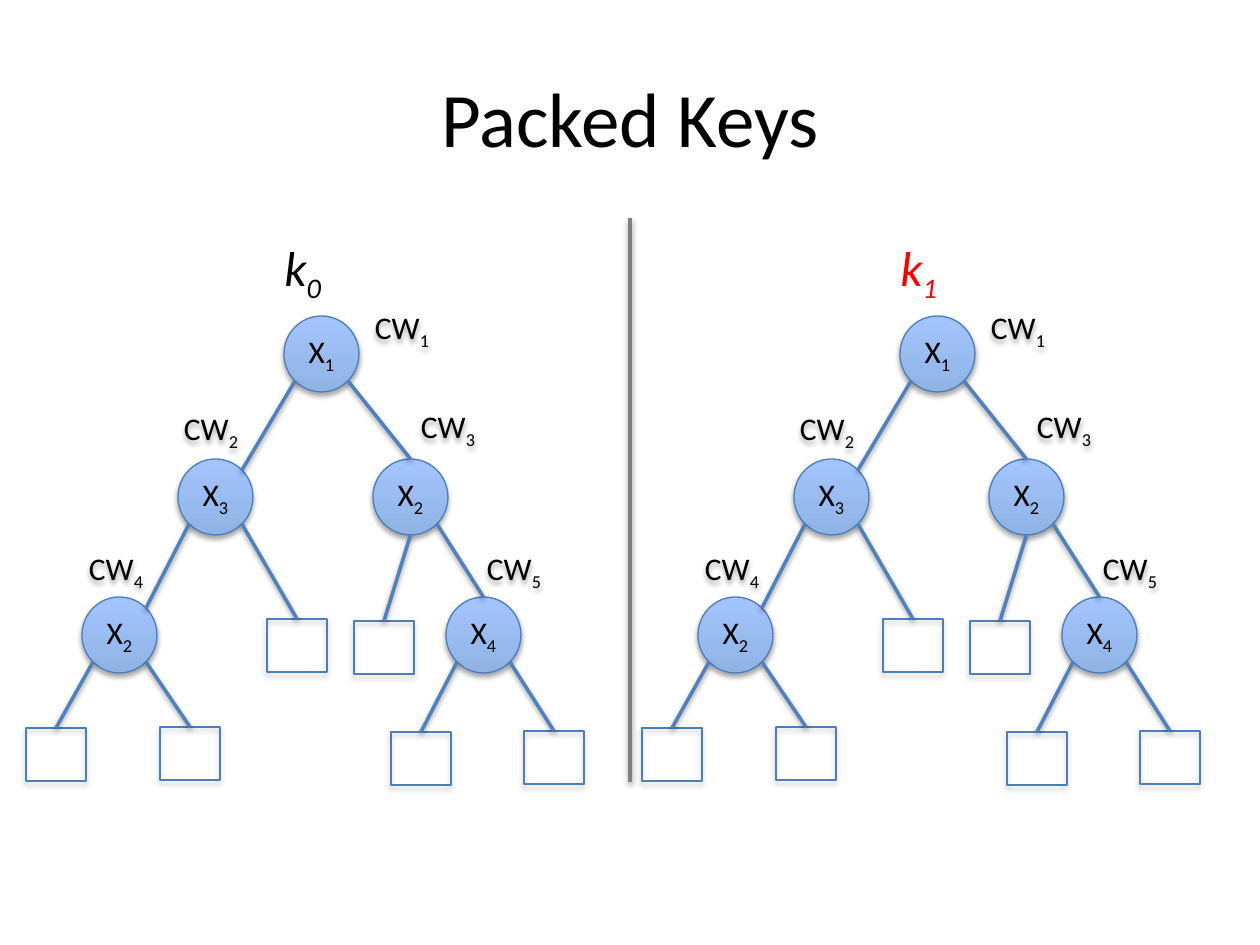
from lxml.etree import SubElement
from pptx import Presentation
from pptx.dml.color import RGBColor
from pptx.enum.shapes import MSO_CONNECTOR as Connector, MSO_SHAPE as Preset
from pptx.enum.text import MSO_ANCHOR as Anchor, PP_ALIGN as Align
from pptx.oxml.ns import qn
from pptx.util import Pt

EMU_PER_PX = 914400 / 126
FONT = "Calibri"
BLACK = RGBColor(0x00, 0x00, 0x00)
RED = RGBColor(0xFF, 0x00, 0x00)
GREY = RGBColor(0x80, 0x80, 0x80)
EDGE_BLUE = RGBColor(0x4F, 0x81, 0xBD)
OUTLINE_BLUE = RGBColor(0x4B, 0x7E, 0xBC)
NODE_BOTTOM = RGBColor(0x8E, 0xB4, 0xE3)
NODE_TOP = RGBColor(0xA4, 0xC4, 0xFF)

NODE_SIZE = (75, 76)
LEAF_SIZE = (60, 53)
LABEL_SIZE = (84, 50)
TREE_GAP = 616

# Tree parts: left and top of each, within the left-hand tree
NODES = {
    "root": ("1", 284, 316), "left": ("3", 178, 459), "right": ("2", 373, 459),
    "far left": ("2", 82, 597), "far right": ("4", 446, 597),
}
LEAVES = {
    "a": (26, 728), "b": (160, 727), "c": (267, 619),
    "d": (354, 621), "e": (391, 732), "f": (524, 731),
}
CORRECTION_WORDS = [("1", 360, 305), ("2", 169, 406), ("3", 406, 404),
                    ("4", 74, 546), ("5", 472, 546)]
# Points on a part, as shares of its width and height
TOP, BOTTOM = (0.5, 0), (0.5, 1)
TOP_RIGHT, BOTTOM_LEFT, BOTTOM_RIGHT = (0.85, 0.15), (0.15, 0.85), (0.85, 0.85)
EDGES = [
    ("root", BOTTOM_LEFT, "left", TOP_RIGHT), ("root", BOTTOM_RIGHT, "right", TOP),
    ("left", BOTTOM_LEFT, "far left", TOP_RIGHT), ("left", BOTTOM_RIGHT, "c", TOP),
    ("right", BOTTOM, "d", TOP), ("right", BOTTOM_RIGHT, "far right", TOP),
    ("far left", BOTTOM_LEFT, "a", TOP), ("far left", BOTTOM_RIGHT, "b", TOP),
    ("far right", BOTTOM_LEFT, "e", TOP), ("far right", BOTTOM_RIGHT, "f", TOP),
]


def px(*lengths):
    return [round(length * EMU_PER_PX) for length in lengths]


class KeySlide:
    def __init__(self, deck):
        self.slide = deck.slides.add_slide(deck.slide_layouts[5])
        self.shapes = self.slide.shapes

    def cast_shadow(self, shape, distance, alpha):
        effects = SubElement(shape.element.spPr, qn("a:effectLst"))
        shadow = SubElement(effects, qn("a:outerShdw"), blurRad=str(Pt(3.1)),
                            dist=str(Pt(distance)), dir="5400000", rotWithShape="0")
        black = SubElement(shadow, qn("a:srgbClr"), val="000000")
        SubElement(black, qn("a:alpha"), val=str(alpha * 1000))

    def styled_run(self, paragraph, text, size, color=BLACK, italic=False,
                   subscript=False):
        run = paragraph.add_run()
        run.text = text
        run.font.name, run.font.size = FONT, Pt(size)
        run.font.color.rgb, run.font.italic = color, italic
        if subscript:
            run.font._element.set("baseline", "-25000")

    def symbol(self, shape, letters, index, size=18, **style):
        paragraph = shape.text_frame.paragraphs[0]
        self.styled_run(paragraph, letters, size, **style)
        self.styled_run(paragraph, index, size, subscript=True, **style)

    def centred_symbol(self, shape, letters, index):
        frame = shape.text_frame
        frame.word_wrap = True
        frame.vertical_anchor = Anchor.MIDDLE
        frame.margin_left = frame.margin_right = 0
        frame.margin_top = frame.margin_bottom = 0
        frame.paragraphs[0].alignment = Align.CENTER
        self.symbol(shape, letters, index)

    def title(self, text, *place):
        heading = self.shapes.title
        heading.left, heading.top, heading.width, heading.height = px(*place)
        heading.text_frame.vertical_anchor = Anchor.MIDDLE
        paragraph = heading.text_frame.paragraphs[0]
        paragraph.alignment = Align.CENTER
        self.styled_run(paragraph, text, 44)

    def line(self, start, end, color):
        stroke = self.shapes.add_connector(Connector.STRAIGHT, *px(*start, *end))
        stroke.line.color.rgb, stroke.line.width = color, Pt(2)
        self.cast_shadow(stroke, 1.6, 38)

    def outline(self, shape):
        shape.line.color.rgb, shape.line.width = OUTLINE_BLUE, Pt(0.75)
        self.cast_shadow(shape, 1.8, 35)

    def node(self, index, x, y):
        circle = self.shapes.add_shape(Preset.OVAL, *px(x, y, *NODE_SIZE))
        circle.fill.gradient()
        circle.fill.gradient_angle = 90
        for stop, position, color in zip(circle.fill.gradient_stops, (0, 1),
                                         (NODE_BOTTOM, NODE_TOP)):
            stop.position, stop.color.rgb = position, color
        self.outline(circle)
        self.centred_symbol(circle, "X", index)

    def leaf(self, x, y):
        box = self.shapes.add_shape(Preset.RECTANGLE, *px(x, y, *LEAF_SIZE))
        box.fill.background()
        self.outline(box)

    def correction_word(self, index, x, y):
        label = self.shapes.add_textbox(*px(x, y, *LABEL_SIZE))
        self.cast_shadow(label, 1.8, 35)
        self.centred_symbol(label, "CW", index)

    def key_name(self, index, x, y, color):
        name = self.shapes.add_textbox(*px(x, y, 76, 72))
        name.text_frame.word_wrap = False
        self.symbol(name, "k", index, size=28, color=color, italic=True)

    def tree(self, offset, key_index, key_color):
        self.key_name(key_index, 272 + offset, 231, key_color)
        corners = {}
        for name, (index, x, y) in NODES.items():
            self.node(index, x + offset, y)
            corners[name] = (x + offset, y, *NODE_SIZE)
        for name, (x, y) in LEAVES.items():
            self.leaf(x + offset, y)
            corners[name] = (x + offset, y, *LEAF_SIZE)

        def point(name, share):
            x, y, width, height = corners[name]
            return x + share[0] * width, y + share[1] * height

        for parent, leaving, child, entering in EDGES:
            self.line(point(parent, leaving), point(child, entering), EDGE_BLUE)
        for index, x, y in CORRECTION_WORDS:
            self.correction_word(index, x + offset, y)


def main():
    deck = Presentation()
    deck.slide_width, deck.slide_height = px(1260, 945)
    keys = KeySlide(deck)

    # Heading and divider
    keys.title("Packed Keys", 63, 38, 1134, 158)
    keys.line((630, 218), (630, 782), GREY)

    # One tree for each key
    keys.tree(0, "0", BLACK)
    keys.tree(TREE_GAP, "1", RED)

    deck.save("out.pptx")


if __name__ == "__main__":
    main()
